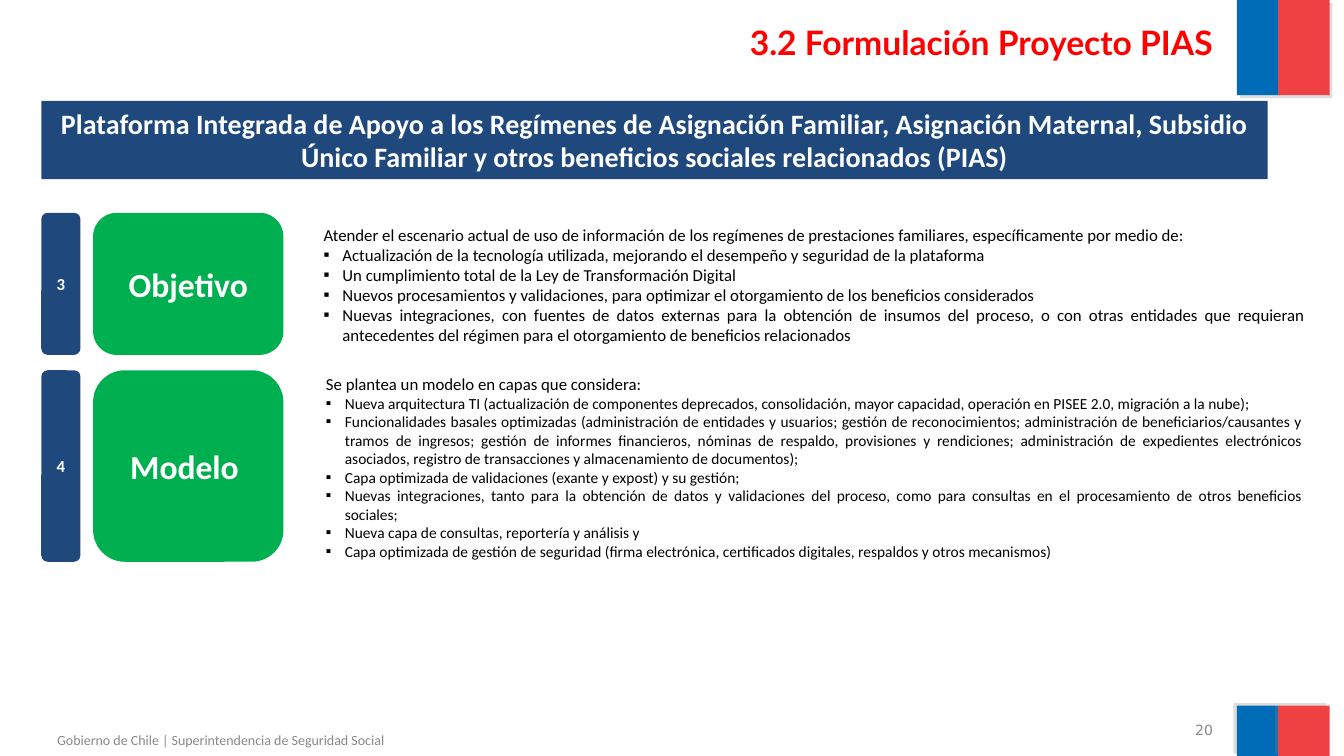
from dataclasses import dataclass

import pptx
import pptx.dml.color
import pptx.enum.shapes
import pptx.enum.text
import pptx.oxml
import pptx.oxml.ns
import pptx.presentation
import pptx.shapes.autoshape
import pptx.shapes.base
import pptx.slide
import pptx.text.text
import pptx.util

Pt = pptx.util.Pt
RGBColor = pptx.dml.color.RGBColor
Align = pptx.enum.text.PP_ALIGN
Anchor = pptx.enum.text.MSO_ANCHOR
Shape = pptx.enum.shapes.MSO_SHAPE

FLAG_BLUE = RGBColor(0x00, 0x6C, 0xB7)
FLAG_RED = RGBColor(0xEF, 0x41, 0x44)
NAVY = RGBColor(0x1F, 0x49, 0x7D)
GREEN = RGBColor(0x00, 0xB0, 0x50)
RED = RGBColor(0xFF, 0x00, 0x00)
GREY = RGBColor(0x89, 0x89, 0x89)
WHITE = RGBColor(0xFF, 0xFF, 0xFF)
BLACK = RGBColor(0x00, 0x00, 0x00)

DRAWING = pptx.oxml.ns.nsdecls("a")
CORNER = 0.167
BULLET_INDENT = 13.5


@dataclass
class Area:
    left: float
    top: float
    width: float
    height: float


@dataclass
class Style:
    size: float
    color: RGBColor
    bold: bool = False
    font: str = "Calibri"
    align: Align = Align.CENTER


@dataclass
class Section:
    number: str
    label: str
    top: float
    height: float
    intro: str
    bullet_size: float
    bullets: list[str]


SECTIONS = [
    Section(
        "3", "Objetivo", 152, 101.5,
        "Atender el escenario actual de uso de información de los regímenes de prestaciones familiares, "
        "específicamente por medio de:",
        12,
        [
            "Actualización de la tecnología utilizada, mejorando el desempeño y seguridad de la plataforma",
            "Un cumplimiento total de la Ley de Transformación Digital",
            "Nuevos procesamientos y validaciones, para optimizar el otorgamiento de los beneficios considerados",
            "Nuevas integraciones, con fuentes de datos externas para la obtención de insumos del proceso, "
            "o con otras entidades que requieran antecedentes del régimen para el otorgamiento de "
            "beneficios relacionados",
        ],
    ),
    Section(
        "4", "Modelo ", 264.5, 136.8,
        "Se plantea un modelo en capas que considera:",
        11,
        [
            "Nueva arquitectura TI (actualización de componentes deprecados, consolidación, mayor capacidad, "
            "operación en PISEE 2.0, migración a la nube);",
            "Funcionalidades basales optimizadas (administración de entidades y usuarios; gestión de "
            "reconocimientos; administración de beneficiarios/causantes y tramos de ingresos; gestión de "
            "informes financieros, nóminas de respaldo, provisiones y rendiciones; administración de "
            "expedientes electrónicos asociados, registro de transacciones y almacenamiento de documentos);",
            "Capa optimizada de validaciones (exante y expost) y su gestión;",
            "Nuevas integraciones, tanto para la obtención de datos y validaciones del proceso, como para "
            "consultas en el procesamiento de otros beneficios sociales;",
            "Nueva capa de consultas, reportería y análisis y",
            "Capa optimizada de gestión de seguridad (firma electrónica, certificados digitales, respaldos "
            "y otros mecanismos)",
        ],
    ),
]


def place(box: pptx.shapes.base.BaseShape, area: Area) -> None:
    box.left, box.top = Pt(area.left), Pt(area.top)
    box.width, box.height = Pt(area.width), Pt(area.height)


def format_paragraph(para: pptx.text.text._Paragraph, style: Style) -> None:
    para.alignment = style.align
    para.space_before = Pt(0)
    for span in para.runs:
        span.font.name = style.font
        span.font.size = Pt(style.size)
        span.font.bold = style.bold
        span.font.color.rgb = style.color


def write(box: pptx.shapes.base.BaseShape, text: str, style: Style, anchor: Anchor = Anchor.MIDDLE) -> None:
    frame = box.text_frame
    frame.text = text
    frame.word_wrap = True
    frame.auto_size = pptx.enum.text.MSO_AUTO_SIZE.NONE
    frame.vertical_anchor = anchor
    for para in frame.paragraphs:
        format_paragraph(para, style)


def add_block(
    page: pptx.slide.Slide, kind: Shape, area: Area, fill: RGBColor
) -> pptx.shapes.autoshape.Shape:
    block = page.shapes.add_shape(kind, Pt(area.left), Pt(area.top), Pt(area.width), Pt(area.height))
    block.shadow.inherit = False
    block.fill.solid()
    block.fill.fore_color.rgb = fill
    block.line.fill.background()
    if kind == Shape.ROUNDED_RECTANGLE:
        block.adjustments[0] = CORNER
    return block


def add_flag(page: pptx.slide.Slide, top: float, height: float, shadow_angle: int) -> None:
    """Draw a blue and red band pair with a hard grey shadow."""
    for left, width, color in ((883.5, 29.5, FLAG_BLUE), (913, 36.7, FLAG_RED)):
        band = add_block(page, Shape.RECTANGLE, Area(left, top, width, height), color)
        effects = band.element.spPr.find(pptx.oxml.ns.qn("a:effectLst"))
        effects.append(pptx.oxml.parse_xml(
            f'<a:outerShdw {DRAWING} blurRad="0" dist="{Pt(3)}" dir="{shadow_angle * 60000}" rotWithShape="0">'
            '<a:srgbClr val="808080"><a:alpha val="25000"/></a:srgbClr></a:outerShdw>'
        ))


def set_bullet(para: pptx.text.text._Paragraph, bulleted: bool) -> None:
    properties = para._p.get_or_add_pPr()
    indent = Pt(BULLET_INDENT) if bulleted else 0
    properties.set("marL", str(indent))
    properties.set("indent", str(-indent))
    if bulleted:
        marks = (
            f'<a:buClr {DRAWING}><a:srgbClr val="{BLACK}"/></a:buClr>',
            f'<a:buFont {DRAWING} typeface="Calibri"/>',
            f'<a:buChar {DRAWING} char="▪"/>',
        )
    else:
        marks = (f"<a:buNone {DRAWING}/>",)
    for mark in marks:
        properties.append(pptx.oxml.parse_xml(mark))


def add_section(page: pptx.slide.Slide, section: Section, body: pptx.shapes.base.BaseShape) -> None:
    tiles = (
        (29.5, 28, NAVY, section.number, 12),
        (66.5, 136, GREEN, section.label, 24),
    )
    for left, width, color, text, size in tiles:
        tile = add_block(page, Shape.ROUNDED_RECTANGLE, Area(left, section.top, width, section.height), color)
        write(tile, text, Style(size, WHITE, bold=True))

    place(body, Area(219, section.top + 0.7, 725.7, section.height))
    write(body, "\n".join([section.intro, *section.bullets]), Style(12, BLACK, align=Align.JUSTIFY))
    side_margin = Pt(round(7.2 + 0.29 * CORNER * section.height, 2))
    body.text_frame.margin_left = body.text_frame.margin_right = side_margin
    for index, para in enumerate(body.text_frame.paragraphs):
        set_bullet(para, bulleted=index > 0)
        if index > 0:
            format_paragraph(para, Style(section.bullet_size, BLACK, align=Align.JUSTIFY))


def add_label(page: pptx.slide.Slide, area: Area, text: str, font: str) -> None:
    box = page.shapes.add_textbox(Pt(area.left), Pt(area.top), Pt(area.width), Pt(area.height))
    write(box, text, Style(10, GREY, font=font, align=Align.RIGHT))


def main() -> None:
    deck = pptx.Presentation()
    deck.slide_width, deck.slide_height = Pt(960), Pt(540)
    page = deck.slides.add_slide(deck.slide_layouts.get_by_name("Two Content"))
    title, *bodies = page.placeholders

    add_flag(page, 0, 68, 45)
    add_flag(page, 504, 36, 215)
    add_label(page, Area(649.5, 514, 224, 15), "20", "DejaVu Sans")
    add_label(page, Area(0, 517, 281.5, 26 - 3), "Gobierno de Chile | Superintendencia de Seguridad Social", "Calibri")

    place(title, Area(16, 12.2, 857.5, 90))
    write(title, "3.2 Formulación Proyecto PIAS", Style(24, RED, True, "Lato", Align.RIGHT), Anchor.TOP)

    banner = add_block(page, Shape.RECTANGLE, Area(29.5, 72, 876, 56), NAVY)
    write(
        banner,
        "Plataforma Integrada de Apoyo a los Regímenes de Asignación Familiar, Asignación Maternal, "
        "Subsidio Único Familiar y otros beneficios sociales relacionados (PIAS)",
        Style(20, WHITE, bold=True),
    )
    for section, body in zip(SECTIONS, bodies):
        add_section(page, section, body)

    deck.save("out.pptx")


if __name__ == "__main__":
    main()
